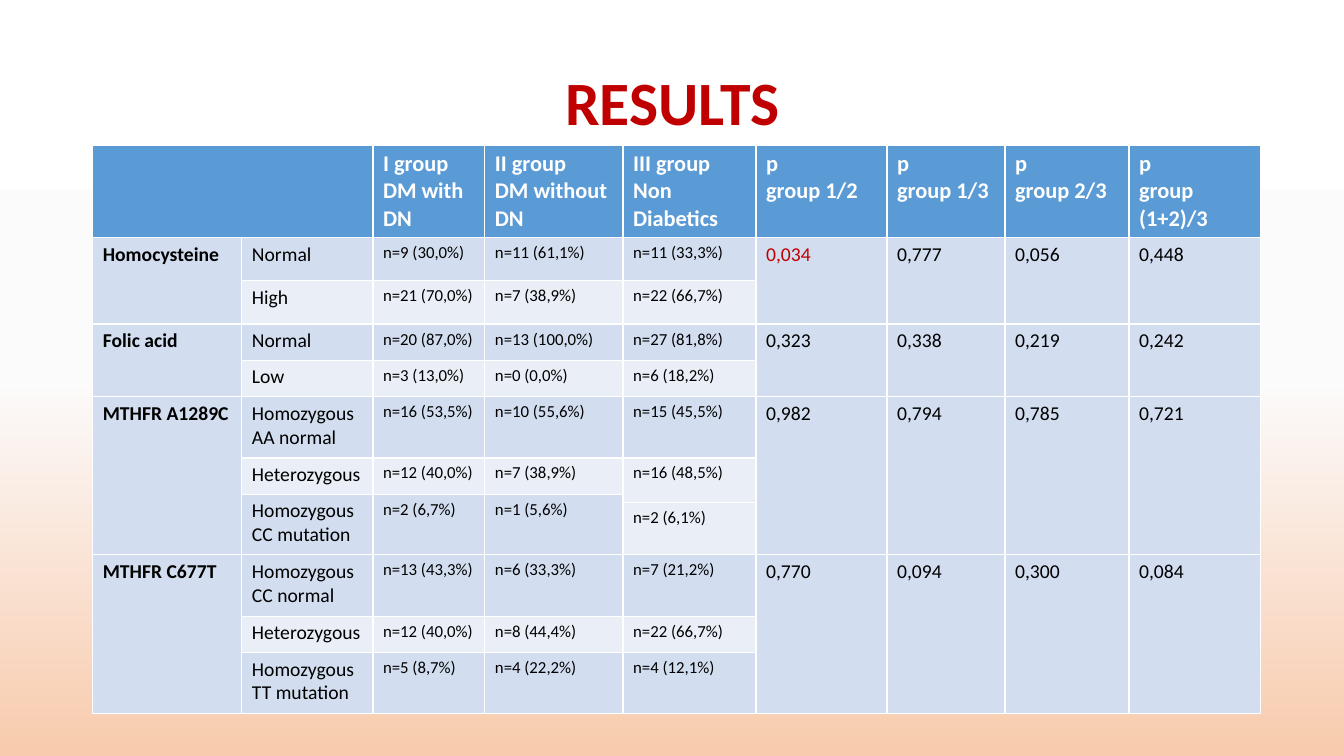
import copy

import pptx
import pptx.dml.color
import pptx.enum.text
import pptx.oxml.ns
import pptx.util

HEAD = ["", None, "I group\nDM with DN", "II group\nDM without DN",
        "III group\nNon Diabetics", "p\ngroup 1/2", "p\ngroup 1/3",
        "p\ngroup 2/3", "p\ngroup\n(1+2)/3"]
GAP = [None] * 4
ROWS = [
    HEAD,
    ["Homocysteine", "Normal", "n=9 (30,0%)", "n=11 (61,1%)", "n=11 (33,3%)",
     "0,034", "0,777", "0,056", "0,448"],
    [None, "High", "n=21 (70,0%)", "n=7 (38,9%)", "n=22 (66,7%)", *GAP],
    ["Folic acid", "Normal", "n=20 (87,0%)", "n=13 (100,0%)", "n=27 (81,8%)",
     "0,323", "0,338", "0,219", "0,242"],
    [None, "Low", "n=3 (13,0%)", "n=0 (0,0%)", "n=6 (18,2%)", *GAP],
    ["MTHFR A1289C", "Homozygous AA normal", "n=16 (53,5%)", "n=10 (55,6%)",
     "n=15 (45,5%)", "0,982", "0,794", "0,785", "0,721"],
    [None, "Heterozygous", "n=12 (40,0%)", "n=7 (38,9%)", "n=16 (48,5%)", *GAP],
    [None, "Homozygous CC mutation", "n=2 (6,7%)", "n=1 (5,6%)", None, *GAP],
    [None, None, None, None, "n=2 (6,1%)", *GAP],
    ["MTHFR C677T", "Homozygous CC normal", "n=13 (43,3%)", "n=6 (33,3%)",
     "n=7 (21,2%)", "0,770", "0,094", "0,300", "0,084"],
    [None, "Heterozygous", "n=12 (40,0%)", "n=8 (44,4%)", "n=22 (66,7%)", *GAP],
    [None, "Homozygous TT mutation", "n=5 (8,7%)", "n=4 (22,2%)",
     "n=4 (12,1%)", *GAP],
]
WIDE = [11.1, 9.75, 8.33, 10.28, 9.9, 9.75, 8.78, 9.23, 9.75]
HIGH = [11.33, 5.73, 5.73, 4.8, 4.8, 8.13, 4.8, 1.07, 6.93, 8.13, 4.8, 8.13]


def tint(code):
    return pptx.dml.color.RGBColor.from_string(code)


class Deck:
    face = "Calibri"
    red, blue, mid, pale = "C00000", "5B9BD5", "D2DEEF", "EAEFF7"

    def __init__(self):
        self.show = pptx.Presentation()
        self.show.slide_width = pptx.util.Inches(13.33)
        self.show.slide_height = pptx.util.Inches(7.5)
        self.page = self.show.slides.add_slide(self.show.slide_layouts[5])

    def col(self, count):
        return int(self.show.slide_width * count / 100)

    def row(self, count):
        return int(self.show.slide_height * count / 100)

    def ink(self, frame, size, bold, code):
        look = {"name": self.face, "size": pptx.util.Pt(size), "bold": bold}
        for para in frame.paragraphs:
            for run in para.runs:
                for key, value in look.items():
                    setattr(run.font, key, value)
                run.font.color.rgb = tint(code)

    def back(self, stops):
        fill = self.page.background.fill
        fill.gradient()
        fill.gradient_angle = 270
        items = self.page.element.find(".//" + pptx.oxml.ns.qn("a:gsLst"))
        while len(items) < len(stops):
            items.append(copy.deepcopy(items[-1]))
        for stop, (place, code) in zip(fill.gradient_stops, stops):
            stop.position = place
            stop.color.rgb = tint(code)

    def title(self, text):
        head = self.page.shapes.title
        spot = {"left": self.col(6.9), "top": self.row(3.2),
                "width": self.col(86.25), "height": self.row(21.47)}
        for key, value in spot.items():
            setattr(head, key, value)
        frame = head.text_frame
        frame.text = text
        frame.vertical_anchor = pptx.enum.text.MSO_ANCHOR.MIDDLE
        para = frame.paragraphs[0]
        para.alignment = pptx.enum.text.PP_ALIGN.CENTER
        para.line_spacing = 0.9
        self.ink(frame, 44, True, self.red)

    def cell(self, cell, text, r, c):
        cell.fill.solid()
        shade = self.blue if r == 0 else self.mid if r % 2 else self.pale
        cell.fill.fore_color.rgb = tint(shade)
        if text is None:
            return
        cell.text = text
        if r == 0:
            self.ink(cell.text_frame, 16, True, "FFFFFF")
        else:
            size = 12 if c in (2, 3, 4) else 14
            code = self.red if text == "0,034" else "000000"
            self.ink(cell.text_frame, size, c == 0, code)

    def table(self, data, wide, high):
        grid = self.page.shapes.add_table(
            len(high), len(wide), self.col(6.9), self.row(19.2),
            self.col(sum(wide)), self.row(sum(high))).table
        for part, size in zip(grid.columns, wide):
            part.width = self.col(size)
        for part, size in zip(grid.rows, high):
            part.height = self.row(size)
        for r, line in enumerate(data):
            for c, text in enumerate(line):
                self.cell(grid.cell(r, c), text, r, c)
                end = r
                while text and end + 1 < len(data) and data[end + 1][c] is None:
                    end += 1
                if end > r:
                    grid.cell(r, c).merge(grid.cell(end, c))
        grid.cell(0, 0).merge(grid.cell(0, 1))


def main():
    deck = Deck()
    deck.back([(0, "FFFFFF"), (0.5, "FBFBFB"), (1, "F8CBAD")])
    deck.title("RESULTS")
    deck.table(ROWS, WIDE, HIGH)
    deck.show.save("out.pptx")


if __name__ == "__main__":
    main()
